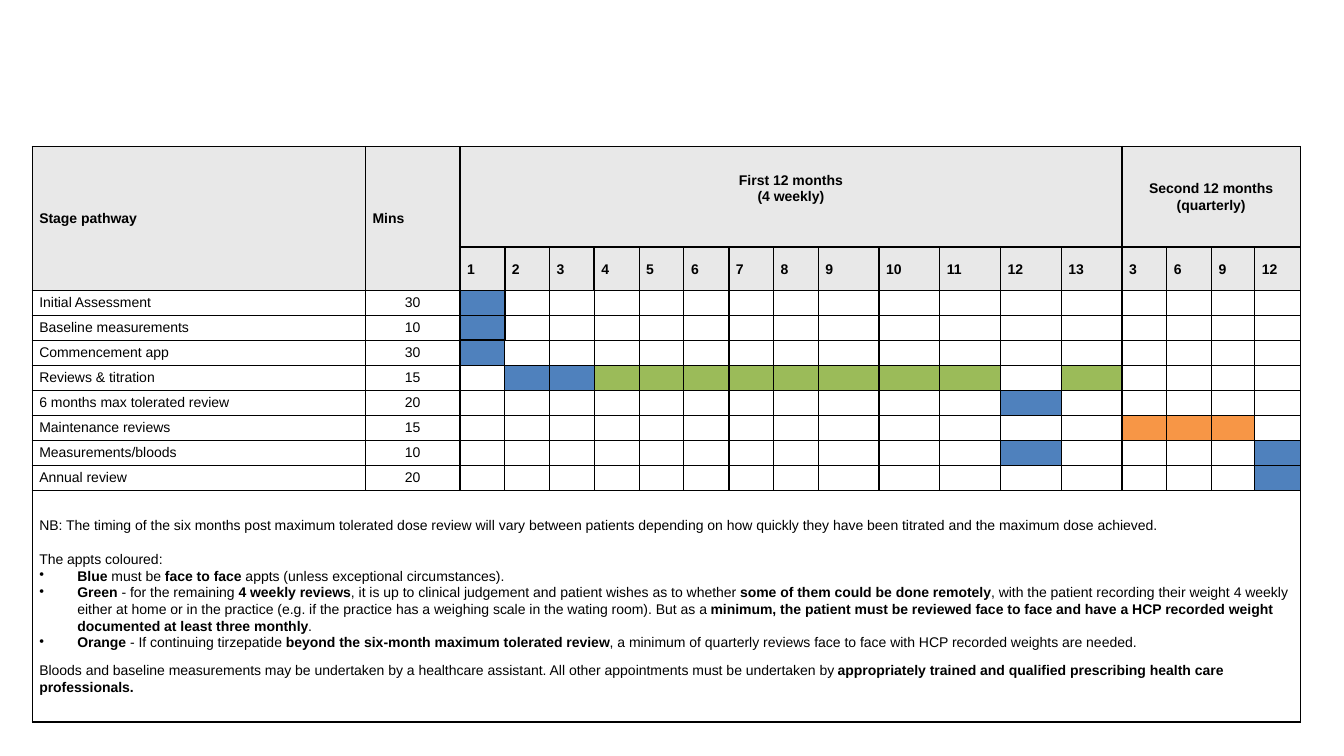
from lxml import etree
from pptx import Presentation
from pptx.dml.color import RGBColor
from pptx.enum.text import MSO_ANCHOR, PP_ALIGN
from pptx.oxml.ns import qn
from pptx.util import Cm, Pt

MID = MSO_ANCHOR.MIDDLE
LEFT, CENTER = PP_ALIGN.LEFT, PP_ALIGN.CENTER
HEX = {"ink": "000000", "head": "E8E8E8", "white": "FFFFFF",
       "blue": "4F81BD", "green": "9BBB59", "orange": "F79646"}
WIDTHS = [8.4, 2.38] + [1.13] * 8 + [1.53] * 5 + [1.13, 1.13, 1.09, 1.15]
HEIGHTS = [2.54, 1.08] + [0.63] * 8 + [5.85]
MONTHS = [*range(1, 14), 3, 6, 9, 12]
STAGES = [
    ("Initial Assessment", 30, {"blue": [2]}),
    ("Baseline measurements", 10, {"blue": [2]}),
    ("Commencement app", 30, {"blue": [2]}),
    ("Reviews & titration", 15, {"blue": [3, 4], "green": [*range(5, 13), 14]}),
    ("6 months max tolerated review", 20, {"blue": [13]}),
    ("Maintenance reviews", 15, {"orange": [15, 16, 17]}),
    ("Measurements/bloods", 10, {"blue": [13, 18]}),
    ("Annual review", 20, {"blue": [18]}),
]
NOTES = [
    (["NB: The timing of the six months post maximum tolerated dose review will vary between "
      "patients depending on how quickly they have been titrated and the maximum dose achieved."],
     False, 12.3),
    (["The appts coloured:"], False, 0),
    (["", "Blue ", "must be ", "face to face", " appts (unless exceptional circumstances)."], True, 0),
    (["", "Green", " - for the remaining ", "4 weekly reviews",
      ", it is up to clinical judgement and patient wishes as to whether ",
      "some of them could be done remotely",
      ", with the patient recording their weight 4 weekly either at home or in the practice "
      "(e.g. if the practice has a weighing scale in the wating room). But as a ",
      "minimum, the patient must be reviewed face to face and have a HCP recorded weight "
      "documented at least three monthly", "."], True, 0),
    (["", "Orange", " - If continuing tirzepatide ", "beyond the six-month maximum tolerated review",
      ", a minimum of quarterly reviews face to face with HCP recorded weights are needed."], True, 8),
    (["Bloods and baseline measurements may be undertaken by a healthcare assistant. "
      "All other appointments must be undertaken by ",
      "appropriately trained and qualified prescribing health care professionals."], False, 8),
]


def add_run(para, text, bold):
    run = para.add_run()
    run.text = text
    run.font.name = "Arial"
    run.font.size = Pt(10)
    run.font.bold = bold
    run.font.color.rgb = RGBColor.from_string(HEX["ink"])


def add_para(cell, first, align=LEFT, after=0, bullet=False):
    frame = cell.text_frame
    para = frame.paragraphs[0] if first else frame.add_paragraph()
    if bullet:
        props = para._p.get_or_add_pPr()
        props.set("marL", str(Cm(0.96)))
        props.set("indent", str(-Cm(0.96)))
        etree.SubElement(props, qn("a:buChar"), char="•")
    para.alignment = align
    para.line_spacing = 1.07
    para.space_after = Pt(after)
    return para


def write(cell, lines, bold=False, align=LEFT):
    for num, line in enumerate(lines):
        add_run(add_para(cell, num == 0, align), line, bold)


def write_notes(cell):
    for num, (parts, bullet, after) in enumerate(NOTES):
        para = add_para(cell, num == 0, after=after, bullet=bullet)
        for pos, part in enumerate(parts):
            if part:
                add_run(para, part, pos % 2 == 1)


def thick_col(row, edge):
    if row == len(HEIGHTS) - 1:
        return False
    return (edge in (2, 15) or edge == 8 and row > 0
            or edge == 3 and row in (1, 2, 3) or edge == 5 and row == 1)


def thick_row(edge, col):
    return edge == 1 and col > 1 or edge == 4 and col == 2 or edge == len(HEIGHTS)


def add_edges(cell, row, col):
    right = col + (cell.span_width if cell.is_merge_origin else 1)
    low = row + (cell.span_height if cell.is_merge_origin else 1)
    edges = {"a:lnL": thick_col(row, col), "a:lnR": thick_col(row, right),
             "a:lnT": thick_row(row, col), "a:lnB": thick_row(low, col)}
    for tag, thick in edges.items():
        line = etree.SubElement(cell._tc.get_or_add_tcPr(), qn(tag), w=str(Pt(1.5 if thick else 1)))
        fill = etree.SubElement(line, qn("a:solidFill"))
        etree.SubElement(fill, qn("a:srgbClr"), val=HEX["ink"])


def style(cell, row, col, tone):
    cell.vertical_anchor = MID
    cell.margin_left = cell.margin_right = Cm(0.18)
    cell.margin_top = cell.margin_bottom = 0
    add_edges(cell, row, col)
    cell.fill.solid()
    cell.fill.fore_color.rgb = RGBColor.from_string(HEX[tone])
    if not cell.text:
        etree.SubElement(cell.text_frame.paragraphs[0]._p, qn("a:endParaRPr"), sz="1000")


def add_grid(slide):
    frame = slide.shapes.add_table(len(HEIGHTS), len(WIDTHS), Cm(0.81), Cm(3.69),
                                   Cm(sum(WIDTHS)), Cm(sum(HEIGHTS)))
    grid = frame.table
    grid.first_row = grid.horz_banding = False
    for col, width in zip(grid.columns, WIDTHS):
        col.width = Cm(width)
    for row, height in zip(grid.rows, HEIGHTS):
        row.height = Cm(height)
    for top, left, low, right in [(0, 0, 1, 0), (0, 1, 1, 1), (0, 2, 0, 14),
                                  (0, 15, 0, 18), (10, 0, 10, 18)]:
        grid.cell(top, left).merge(grid.cell(low, right))
    return grid


def fill_grid(grid):
    write(grid.cell(0, 0), ["Stage pathway"], True)
    write(grid.cell(0, 1), ["Mins"], True)
    write(grid.cell(0, 2), ["First 12 months", "(4 weekly)"], True, CENTER)
    write(grid.cell(0, 15), ["Second 12 months (quarterly)"], True, CENTER)
    for col, month in enumerate(MONTHS, 2):
        write(grid.cell(1, col), [str(month)], True)
    tones = {}
    for row, (stage, mins, marks) in enumerate(STAGES, 2):
        write(grid.cell(row, 0), [stage])
        write(grid.cell(row, 1), [str(mins)], align=CENTER)
        for tone, cols in marks.items():
            tones.update({(row, col): tone for col in cols})
    write_notes(grid.cell(10, 0))
    for row in range(len(HEIGHTS)):
        for col in range(len(WIDTHS)):
            cell = grid.cell(row, col)
            if not cell.is_spanned:
                style(cell, row, col, tones.get((row, col), "head" if row < 2 else "white"))
    grid.cell(0, 2).margin_bottom = Cm(0.43)


def main():
    deck = Presentation()
    deck.slide_width, deck.slide_height = Cm(33.87), Cm(19.05)
    slide = deck.slides.add_slide(deck.slide_layouts[6])
    fill_grid(add_grid(slide))
    deck.save("out.pptx")


if __name__ == "__main__":
    main()
